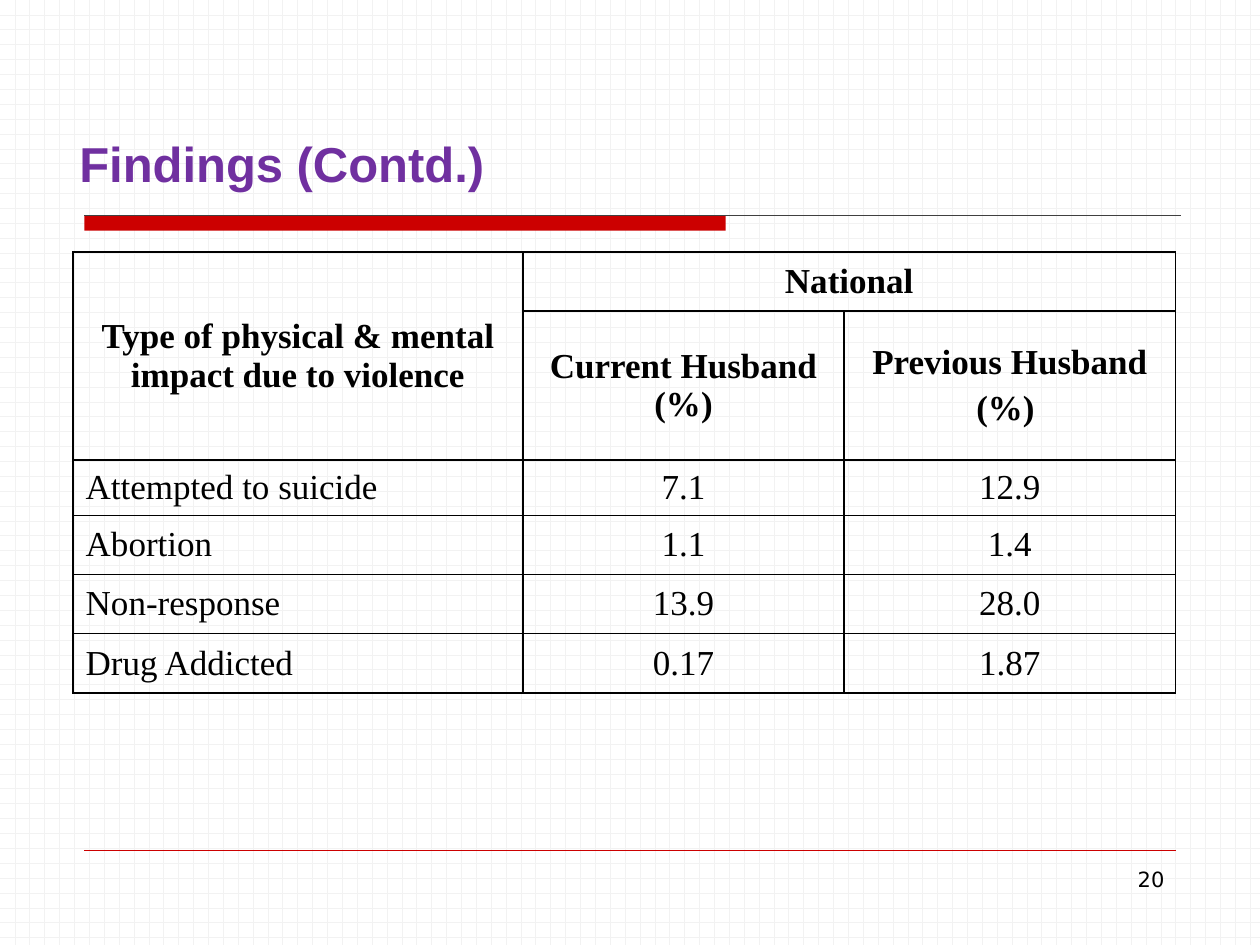
from dataclasses import dataclass

from pptx import Presentation, util as u
from pptx.dml.color import RGBColor
from pptx.enum import dml, shapes, text
from pptx.oxml import parse_xml
from pptx.oxml.ns import nsdecls, qn


@dataclass(frozen=True)
class Theme:
    ink: str = "000000"
    title: str = "7030A0"
    accent: str = "CC0000"
    rule: str = "404040"
    paper: str = "FFFFFF"
    brick: str = "F2F2F2"
    title_font: str = "Arial"
    table_font: str = "Times New Roman"
    number_font: str = "DejaVu Sans"
    title_size: int = 28
    table_size: int = 20
    number_size: int = 12
    border: float = 1


THEME = Theme()
TITLE = "Findings (Contd.)"
PAGE_NUMBER = "20"
ROWS = [
    ["Type of physical & mental impact due to violence", "National", ""],
    ["", "Current Husband (%)", "Previous Husband\n(%) "],
    ["Attempted to suicide", "7.1", "12.9"],
    ["Abortion", "1.1", "1.4"],
    ["Non-response", "13.9", "28.0"],
    ["Drug Addicted", "0.17", "1.87"],
]
HEADER_ROWS = 2
MERGES = [((0, 0), (1, 0)), ((0, 1), (0, 2))]
COLUMN_WIDTHS = [3.57, 2.55, 2.63]
ROW_HEIGHTS = [0.47, 1.18, 0.44, 0.47, 0.47, 0.47]
MARGIN = 0.67


def inches(*lengths):
    return [u.Inches(length) for length in lengths]


def color(value):
    return RGBColor.from_string(value)


def set_font(para, name, size, ink, bold=False):
    font = para.font
    font.name, font.size, font.bold = name, u.Pt(size), bold
    font.color.rgb = color(ink)


def add_rule(page, left, right, top, ink, width):
    rule = page.shapes.add_connector(
        shapes.MSO_CONNECTOR.STRAIGHT, *inches(left, top, right, top))
    rule.line.color.rgb = color(ink)
    rule.line.width = u.Pt(width)
    rule._element.spPr.append(parse_xml(f"<a:effectLst {nsdecls('a')}/>"))


def add_bar(page, left, top, width, height):
    bar = page.shapes.add_shape(
        shapes.MSO_SHAPE.RECTANGLE, *inches(left, top, width, height))
    bar.shadow.inherit = False
    bar.fill.solid()
    bar.fill.fore_color.rgb = color(THEME.accent)
    bar.line.fill.background()


def add_title(page):
    title = page.shapes.title
    title.left, title.top, title.width, title.height = inches(0.53, 1.01, 9.47, 0.57)
    frame = title.text_frame
    frame.text = TITLE
    frame.word_wrap = True
    frame.vertical_anchor = text.MSO_ANCHOR.BOTTOM
    frame.auto_size = text.MSO_AUTO_SIZE.NONE
    para = frame.paragraphs[0]
    para.alignment = text.PP_ALIGN.LEFT
    set_font(para, THEME.title_font, THEME.title_size, THEME.title, True)


def set_borders(cell):
    properties = cell._tc.get_or_add_tcPr()
    for index, side in enumerate(("lnL", "lnR", "lnT", "lnB")):
        properties.insert(index, parse_xml(
            f'<a:{side} {nsdecls("a")} w="{u.Pt(THEME.border)}"><a:solidFill>'
            f'<a:srgbClr val="{THEME.ink}"/></a:solidFill></a:{side}>'))


def fill_cell(cell, content, header, centered):
    cell.fill.background()
    set_borders(cell)
    cell.vertical_anchor = text.MSO_ANCHOR.MIDDLE
    cell.text = content
    for index, para in enumerate(cell.text_frame.paragraphs):
        para.alignment = text.PP_ALIGN.CENTER if centered else text.PP_ALIGN.LEFT
        para.space_before = u.Pt(0.2 * THEME.table_size if index else 0)
        set_font(para, THEME.table_font, THEME.table_size, THEME.ink, header)


def add_findings(page):
    frame = page.shapes.add_table(
        len(ROWS), len(COLUMN_WIDTHS),
        *inches(0.58, 2, sum(COLUMN_WIDTHS), sum(ROW_HEIGHTS)))
    table = frame.table
    table.first_row = table.horz_banding = False
    for column, width in zip(table.columns, COLUMN_WIDTHS):
        column.width = u.Inches(width)
    for row, height in zip(table.rows, ROW_HEIGHTS):
        row.height = u.Inches(height)
    for first, last in MERGES:
        table.cell(*first).merge(table.cell(*last))
    for r, values in enumerate(ROWS):
        for c, content in enumerate(values):
            header = r < HEADER_ROWS
            fill_cell(table.cell(r, c), content, header, header or c > 0)


def add_page_number(page):
    box = page.shapes.add_textbox(*inches(7.17, 6.83, 2.17, 0.52))
    frame = box.text_frame
    frame.word_wrap = True
    frame.text = PAGE_NUMBER
    para = frame.paragraphs[0]
    para.alignment = text.PP_ALIGN.RIGHT
    set_font(para, THEME.number_font, THEME.number_size, THEME.ink)


def main():
    deck = Presentation()
    deck.slide_width, deck.slide_height = inches(10, 7.5)
    page = deck.slides.add_slide(deck.slide_layouts.get_by_name("Title Only"))
    fill = page.background.fill
    fill.patterned()
    fill.pattern = dml.MSO_PATTERN.HORIZONTAL_BRICK
    fill.fore_color.rgb = color(THEME.brick)
    fill.back_color.rgb = color(THEME.paper)

    add_bar(page, MARGIN, 1.71, 5.09, 0.12)
    add_rule(page, MARGIN, 9.37, 1.71, THEME.rule, 0.75)
    add_rule(page, MARGIN, 10 - MARGIN, 6.75, THEME.accent, 0.25)
    add_title(page)
    add_findings(page)
    add_page_number(page)
    deck.save("out.pptx")


if __name__ == "__main__":
    main()
